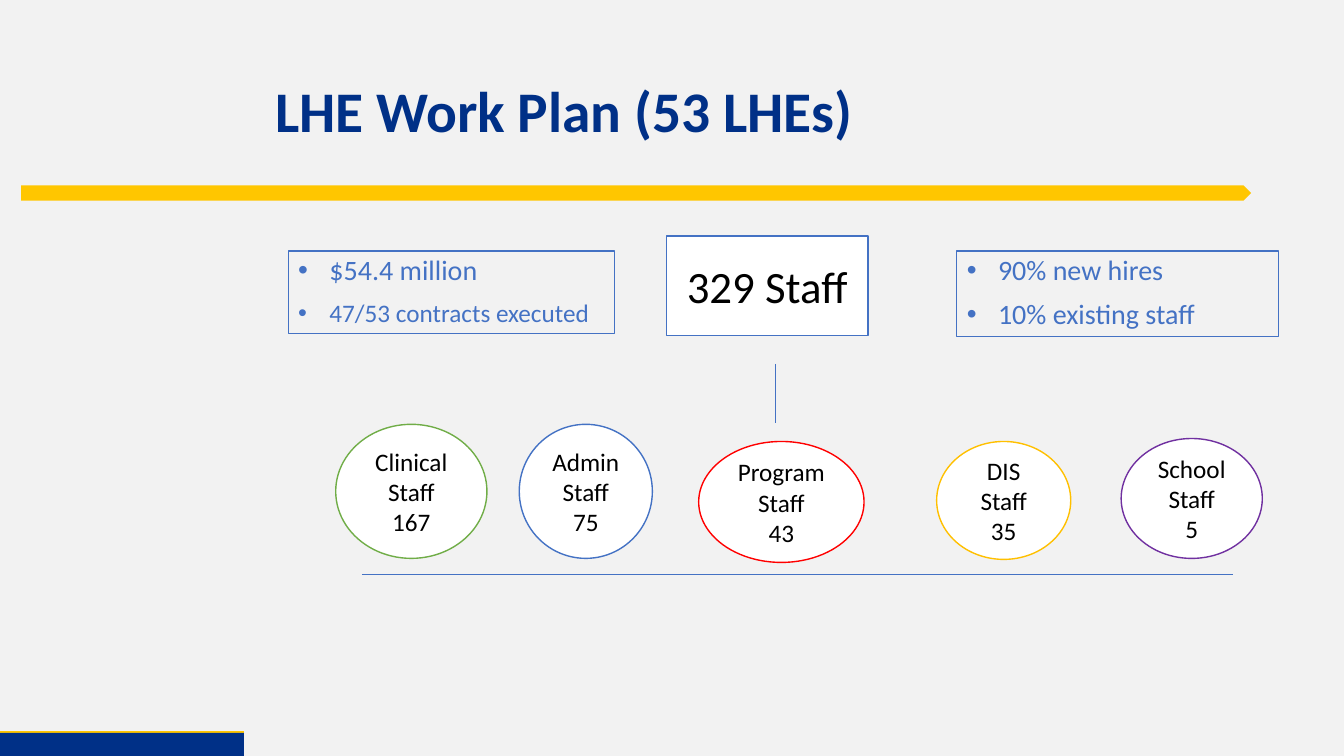
import pptx
import pptx.util
import pptx.dml.color
import pptx.enum.shapes
import pptx.enum.text
import pptx.oxml.ns
import lxml.etree

Inches = pptx.util.Inches
Pt = pptx.util.Pt
SHAPE = pptx.enum.shapes.MSO_SHAPE
LINK = pptx.enum.shapes.MSO_CONNECTOR
ALIGN = pptx.enum.text.PP_ALIGN
ANCHOR = pptx.enum.text.MSO_ANCHOR
qn = pptx.oxml.ns.qn

NAVY, GOLD, BLUE, WHITE, BLACK = "003087", "FFC600", "4472C4", "FFFFFF", "000000"


def paint(target, color):
    """Give a fill or font colour format a solid hex colour."""
    target.rgb = pptx.dml.color.RGBColor.from_string(color)


def add_box(slide, kind, box, fill=None, line=None, width=1):
    """Add a preset shape without shadow in the given box."""
    shape = slide.shapes.add_shape(kind, *map(Inches, box))
    shape.shadow.inherit = False
    if fill:
        shape.fill.solid()
        paint(shape.fill.fore_color, fill)
    else:
        shape.fill.background()
    if line:
        paint(shape.line.color, line)
        shape.line.width = Pt(width)
    else:
        shape.line.fill.background()
    return shape


def add_line(slide, start, end, color, width, kind=LINK.STRAIGHT):
    """Add a plain connector between two points."""
    line = slide.shapes.add_connector(kind, *map(Inches, start + end))
    paint(line.line.color, color)
    line.line.width = Pt(width)
    lxml.etree.SubElement(line._element.spPr, qn("a:effectLst"))


def style(part, size, color, align=ALIGN.LEFT, bold=False):
    """Format a paragraph and its runs."""
    part.alignment = align
    for run in part.runs:
        run.font.name = "Calibri"
        run.font.size = Pt(size)
        run.font.bold = bold
        paint(run.font.color, color)


def add_frame(slide):
    """Draw the background, the gold arrow bar and the corner block."""
    slide.background.fill.solid()
    paint(slide.background.fill.fore_color, "F2F2F2")
    add_box(slide, SHAPE.PENTAGON, (0.21, 1.84, 12.2, 0.15), GOLD)
    add_line(slide, (0, 7.27), (2.42, 7.27), GOLD, 3)
    add_box(slide, SHAPE.RECTANGLE, (0, 7.27, 2.42, 0.23), NAVY)


def add_title(slide, box, text):
    """Place the slide title."""
    frame = slide.shapes.add_textbox(*map(Inches, box)).text_frame
    frame.word_wrap = True
    frame.vertical_anchor = ANCHOR.MIDDLE
    frame.text = text
    frame.paragraphs[0].line_spacing = 0.9
    style(frame.paragraphs[0], 41, NAVY, bold=True)


def add_facts(slide, box, facts):
    """Place an outlined box of bulleted facts, each with its size."""
    frame = add_box(slide, SHAPE.RECTANGLE, box, line=BLUE, width=0.75).text_frame
    frame.word_wrap = True
    frame.vertical_anchor = ANCHOR.TOP
    frame.text = "\n".join(text for text, size in facts)
    for i, (part, (text, size)) in enumerate(zip(frame.paragraphs, facts)):
        props = part._p.get_or_add_pPr()
        props.set("marL", str(Inches(0.31)))
        props.set("indent", str(Inches(-0.31)))
        font = lxml.etree.SubElement(props, qn("a:buFont"))
        font.set("typeface", "Arial")
        lxml.etree.SubElement(props, qn("a:buChar")).set("char", "•")
        part.line_spacing = 0.9
        if i:
            part.space_before = Pt(10)
        style(part, size, BLUE)


def add_count(slide, kind, box, text, size, line):
    """Place a white shape with a centred staff count."""
    frame = add_box(slide, kind, box, WHITE, line).text_frame
    frame.word_wrap = True
    frame.margin_left = frame.margin_right = Inches(0.05)
    frame.vertical_anchor = ANCHOR.MIDDLE
    frame.text = text
    for part in frame.paragraphs:
        style(part, size, BLACK, ALIGN.CENTER)


def add_groups(slide):
    """Draw one ellipse per staff group above the base line."""
    groups = [
        ("Clinical", 167, (3.33, 4.21, 1.5, 1.33), "70AD47"),
        ("Admin", 75, (5.15, 4.21, 1.32, 1.33), BLUE),
        ("Program", 43, (6.93, 4.38, 1.64, 1.2), "FF0000"),
        ("DIS", 35, (9.29, 4.38, 1.33, 1.17), "FFC000"),
        ("School", 5, (11.12, 4.35, 1.4, 1.19), "7030A0"),
    ]
    for name, count, box, color in groups:
        add_count(slide, SHAPE.OVAL, box, f"{name}\nStaff\n{count}", 18, color)
    add_line(slide, (3.59, 5.7), (12.23, 5.7), BLUE, 0.5)


def main():
    """Build the slide and save it."""
    deck = pptx.Presentation()
    deck.slide_width, deck.slide_height = Inches(13.33), Inches(7.5)
    slide = deck.slides.add_slide(deck.slide_layouts[6])
    add_frame(slide)
    add_title(slide, (2.63, 0.4, 10.36, 1.47), "LHE Work Plan (53 LHEs)")
    add_count(slide, SHAPE.RECTANGLE, (6.61, 2.34, 2, 0.99), "329 Staff", 32, BLUE)
    add_facts(slide, (2.86, 2.49, 3.24, 0.82),
              [("$54.4 million", 20), ("47/53 contracts executed", 18)])
    add_facts(slide, (9.49, 2.49, 3.19, 0.85),
              [("90% new hires", 20), ("10% existing staff", 20)])
    add_groups(slide)
    add_line(slide, (7.69, 3.61), (7.69, 4.2), BLUE, 0.5, LINK.ELBOW)
    deck.save("out.pptx")


if __name__ == "__main__":
    main()
